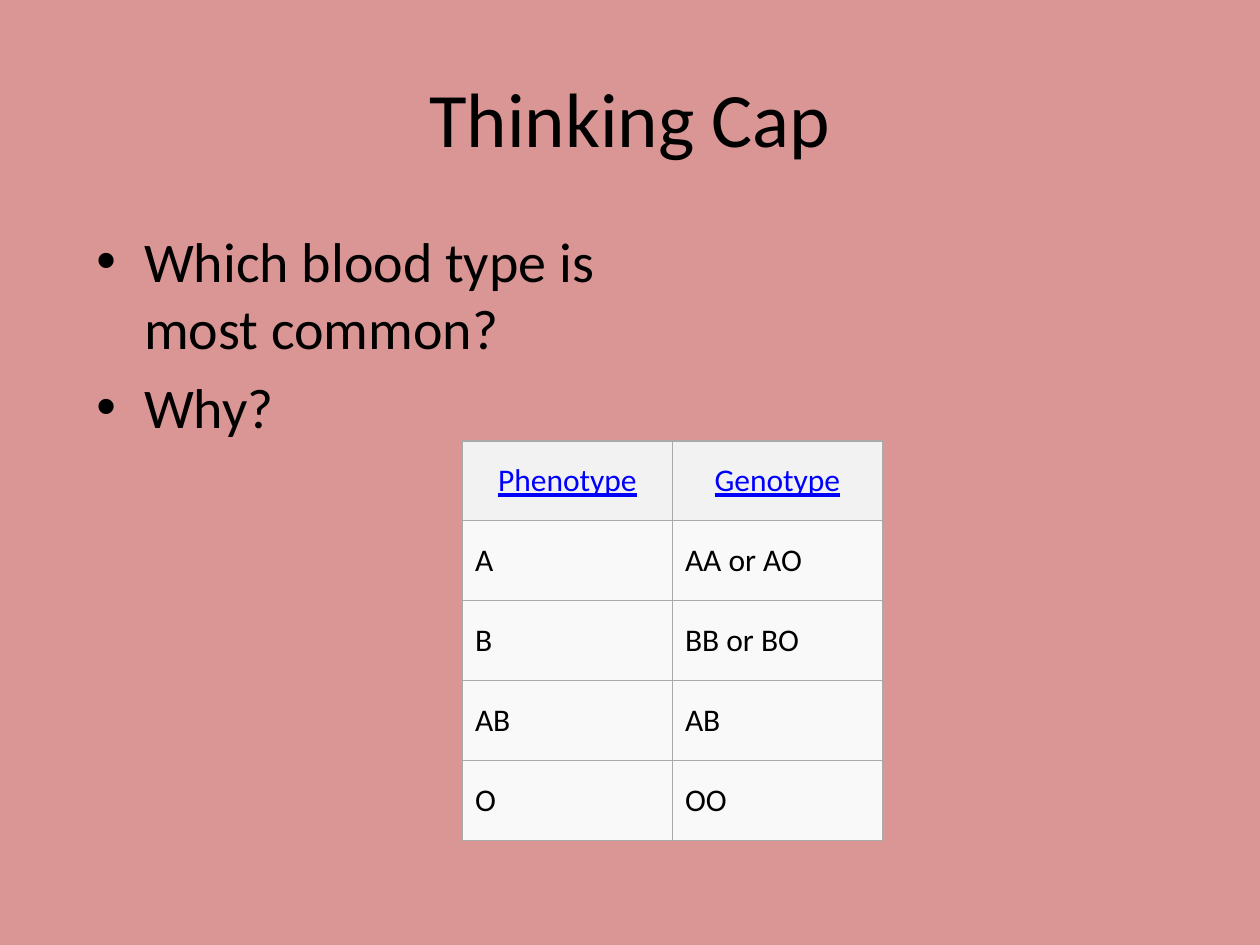
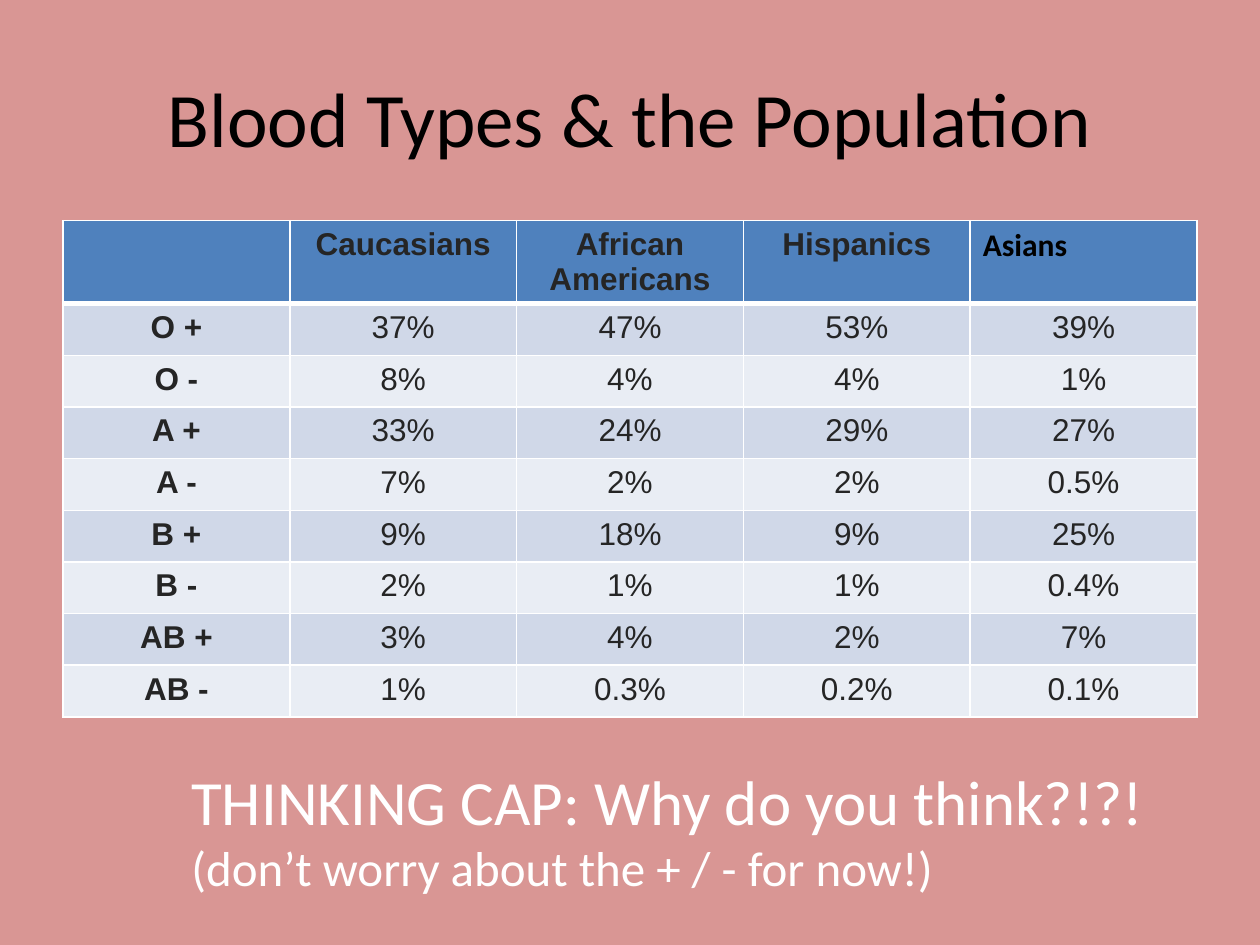
"""Build two slides on blood types: a thinking question and a population table."""
import lxml.etree
import pptx
import pptx.dml.color
import pptx.enum.text
import pptx.oxml.ns
import pptx.util

COLOURS = {
    "background": "D99694", "ink": "000000", "link": "0000FF", "callout": "FFFFFF",
    "gene_head": "F2F2F2", "gene_body": "F9F9F9", "gene_border": "AAAAAA",
    "share_head": "4F81BD", "share_odd": "D0D8E8", "share_even": "E9EDF4",
    "share_text": "252525", "share_border": "FFFFFF",
}
CENTRE = pptx.enum.text.PP_ALIGN.CENTER
LEFT = pptx.enum.text.PP_ALIGN.LEFT
MIDDLE = pptx.enum.text.MSO_ANCHOR.MIDDLE
TOP = pptx.enum.text.MSO_ANCHOR.TOP
inch = pptx.util.Inches


def style_run(run, size, colour, face="Calibri", bold=False, underline=False):
    run.font.size = pptx.util.Pt(size)
    run.font.name = face
    run.font.bold = bold
    run.font.underline = underline
    run.font.color.rgb = pptx.dml.color.RGBColor.from_string(COLOURS[colour])


def style_cell(cell, text, fill, border, align, anchor, bottom_width, width, **font):
    cell.text = text
    cell.vertical_anchor = anchor
    cell.fill.solid()
    cell.fill.fore_color.rgb = pptx.dml.color.RGBColor.from_string(COLOURS[fill])
    paragraph = cell.text_frame.paragraphs[0]
    paragraph.alignment = align
    for run in paragraph.runs:
        style_run(run, 18, **font)
    qn = pptx.oxml.ns.qn
    for position, side in enumerate(("lnL", "lnR", "lnT", "lnB")):
        points = bottom_width if side == "lnB" else width
        line = lxml.etree.Element(qn(f"a:{side}"), w=str(pptx.util.Pt(points)))
        paint = lxml.etree.SubElement(line, qn("a:solidFill"))
        lxml.etree.SubElement(paint, qn("a:srgbClr"), val=COLOURS[border])
        cell._tc.get_or_add_tcPr().insert(position, line)


deck = pptx.Presentation()
deck.slide_width, deck.slide_height = inch(10), inch(7.5)
W, H = deck.slide_width, deck.slide_height

slides = []
for heading in ("Thinking Cap", "Blood Types & the Population"):
    slide = deck.slides.add_slide(deck.slide_layouts[5])
    slide.background.fill.solid()
    slide.background.fill.fore_color.rgb = pptx.dml.color.RGBColor.from_string(COLOURS["background"])
    title = slide.shapes.title
    title.left, title.top, title.width, title.height = (
        int(W * 0.05), int(H * 0.04), int(W * 0.9), inch(1.25))
    title.text_frame.text = heading
    title.text_frame.vertical_anchor = MIDDLE
    title.text_frame.paragraphs[0].alignment = CENTRE
    style_run(title.text_frame.paragraphs[0].runs[0], 44, "ink")
    slides.append(slide)
question_slide, population_slide = slides

questions = question_slide.shapes.add_textbox(
    W // 15, inch(1.75), inch(4.83), int(H * 0.66)).text_frame
questions.word_wrap = True
questions.text = "Which blood type is most common?\nWhy?"
for question in questions.paragraphs:
    question.space_before = pptx.util.Pt(6.4)
    style_run(question.runs[0], 32, "ink")
    properties = question._p.get_or_add_pPr()
    properties.set("marL", str(inch(0.38)))
    properties.set("indent", str(-inch(0.38)))
    lxml.etree.SubElement(properties, pptx.oxml.ns.qn("a:buFont"), typeface="Arial")
    lxml.etree.SubElement(properties, pptx.oxml.ns.qn("a:buChar"), char="•")

gene_rows = [
    ("Phenotype", "Genotype"),
    ("A", "AA or AO"),
    ("B", "BB or BO"),
    ("AB", "AB"),
    ("O", "OO"),
]
genes = question_slide.shapes.add_table(
    len(gene_rows), 2, inch(3.67), inch(3.5), W // 3, inch(3.17)).table
genes.first_row = genes.horz_banding = False
for r, gene_row in enumerate(gene_rows):
    head = r == 0
    for c, text in enumerate(gene_row):
        style_cell(
            genes.cell(r, c), text, "gene_head" if head else "gene_body", "gene_border",
            CENTRE if head else LEFT, MIDDLE, 0.75, 0.75,
            colour="link" if head else "ink", underline=head)

share_rows = [
    ("", "Caucasians", "African Americans", "Hispanics", "Asians"),
    ("O +", "37%", "47%", "53%", "39%"),
    ("O -", "8%", "4%", "4%", "1%"),
    ("A +", "33%", "24%", "29%", "27%"),
    ("A -", "7%", "2%", "2%", "0.5%"),
    ("B +", "9%", "18%", "9%", "25%"),
    ("B -", "2%", "1%", "1%", "0.4%"),
    ("AB +", "3%", "4%", "2%", "7%"),
    ("AB -", "1%", "0.3%", "0.2%", "0.1%"),
]
shares = population_slide.shapes.add_table(
    len(share_rows), 5, int(W * 0.05), inch(1.75), int(W * 0.9), inch(3.9)).table
shares.first_row = shares.horz_banding = False
for r, share_row in enumerate(share_rows):
    head = r == 0
    shares.rows[r].height = inch(0.66 if head else 0.41)
    fill = "share_head" if head else ("share_even", "share_odd")[r % 2]
    for c, text in enumerate(share_row):
        plain = text == "Asians"
        style_cell(
            shares.cell(r, c), text, fill, "share_border",
            LEFT if plain else CENTRE, TOP, 3 if head else 1, 1,
            colour="ink" if plain else "share_text",
            face="Calibri" if plain else "Arial", bold=head or c == 0)
for c in range(len(share_rows[0])):
    shares.cell(1, c)._tc.tcPr.find(pptx.oxml.ns.qn("a:lnT")).set("w", str(pptx.util.Pt(3)))

callout = population_slide.shapes.add_textbox(
    inch(1.42), int(H * 0.8), int(W * 0.8), inch(1.18)).text_frame
callout.word_wrap = True
for text, size in (("THINKING CAP: Why do you think?!?! ", 36),
                   ("(don’t worry about the + / - for now!)", 28)):
    run = callout.paragraphs[0].add_run()
    run.text = text
    style_run(run, size, "callout")

deck.save("out.pptx")
